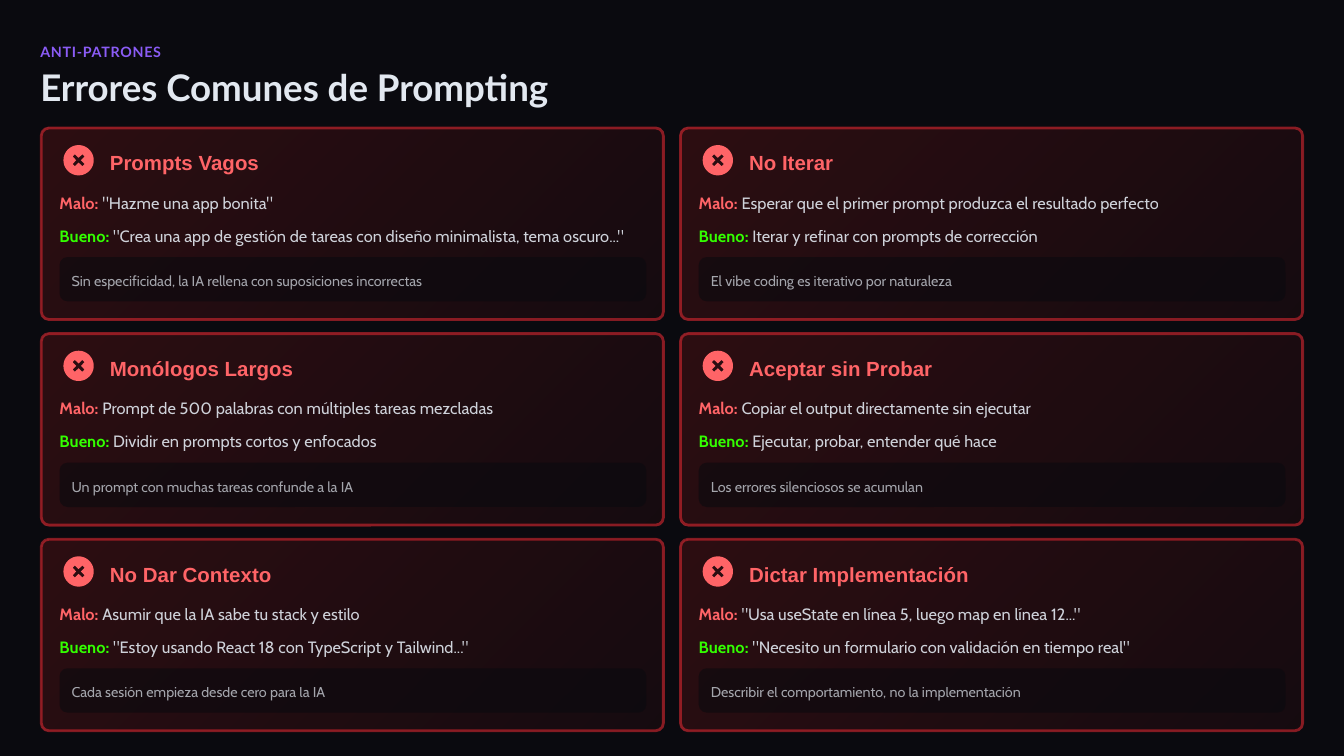
"""Builds a slide with six cards on common prompting mistakes."""
from math import cos, radians, sin

from pptx import Presentation
from pptx.dml.color import RGBColor
from pptx.enum.shapes import MSO_SHAPE
from pptx.enum.text import MSO_ANCHOR
from pptx.oxml.ns import qn
from pptx.oxml.xmlchemy import OxmlElement
from pptx.util import Inches, Pt

COLORS = {
    "background": "0A0A0F",
    "accent": "8B5CF6",
    "text": "E2E8F0",
    "card": "82181A",
    "border": "FB2C36",
    "bad": "FF6467",
    "good": "33FF00",
}
RGB = {name: RGBColor.from_string(value) for name, value in COLORS.items()}

CARDS = [
    ("Prompts Vagos", '"Hazme una app bonita"',
     '"Crea una app de gestión de tareas con diseño minimalista, tema oscuro..."',
     "Sin especificidad, la IA rellena con suposiciones incorrectas"),
    ("No Iterar", "Esperar que el primer prompt produzca el resultado perfecto",
     "Iterar y refinar con prompts de corrección",
     "El vibe coding es iterativo por naturaleza"),
    ("Monólogos Largos", "Prompt de 500 palabras con múltiples tareas mezcladas",
     "Dividir en prompts cortos y enfocados",
     "Un prompt con muchas tareas confunde a la IA"),
    ("Aceptar sin Probar", "Copiar el output directamente sin ejecutar",
     "Ejecutar, probar, entender qué hace",
     "Los errores silenciosos se acumulan"),
    ("No Dar Contexto", "Asumir que la IA sabe tu stack y estilo",
     '"Estoy usando React 18 con TypeScript y Tailwind..."',
     "Cada sesión empieza desde cero para la IA"),
    ("Dictar Implementación", '"Usa useState en línea 5, luego map en línea 12..."',
     '"Necesito un formulario con validación en tiempo real"',
     "Describir el comportamiento, no la implementación"),
]

CIRCLE = [(0.15, angle) for angle in range(0, 360, 5)]
CROSS = [(radius, turn + angle) for turn in (270, 180, 90, 0)
         for radius, angle in ((0.07, 58), (0.07, 32), (0.024, 0))]

presentation = Presentation()
presentation.slide_width = Inches(13.33)
presentation.slide_height = Inches(7.5)
slide = presentation.slides.add_slide(presentation.slide_layouts[6])
slide.background.fill.solid()
slide.background.fill.fore_color.rgb = RGB["background"]


def set_opacity(element, *percents):
    """Give each colour inside the element its opacity, in order."""
    for color, percent in zip(element.iter(qn("a:srgbClr")), percents):
        alpha = OxmlElement("a:alpha")
        alpha.set("val", str(percent * 1000))
        color.append(alpha)


def add_text(left, top, width, height, runs, font, size, spacing=1.2):
    """Add one line of text made of (text, color, bold, opacity) runs."""
    box = slide.shapes.add_textbox(Inches(left), Inches(top), Inches(width), Inches(height))
    frame = box.text_frame
    frame.word_wrap = True
    frame.vertical_anchor = MSO_ANCHOR.MIDDLE
    frame.margin_left = frame.margin_right = frame.margin_top = frame.margin_bottom = 0
    paragraph = frame.paragraphs[0]
    paragraph.line_spacing = spacing
    for text, color, bold, opacity in runs:
        run = paragraph.add_run()
        run.text = text
        run.font.name = font
        run.font.size = Pt(size)
        run.font.bold = bold
        run.font.color.rgb = RGB[color]
        if opacity < 100:
            set_opacity(run.font._element, opacity)
    return box


eyebrow = add_text(0.4, 0.4, 12.6, 0.2, [("ANTI-PATRONES", "accent", True, 100)], "Lato", 10.2)
eyebrow.text_frame.paragraphs[0].runs[0].font._element.set("spc", "50")
add_text(0.4, 0.69, 12.6, 0.4, [("Errores Comunes de Prompting", "text", True, 100)],
         "Lato", 26.2, 0.9)

for index, (title, bad, good, note) in enumerate(CARDS):
    row, column = divmod(index, 2)
    left = 0.41 + column * 6.34
    top = 1.27 + row * 2.04

    card = slide.shapes.add_shape(MSO_SHAPE.ROUNDED_RECTANGLE, Inches(left), Inches(top),
                                  Inches(6.17), Inches(1.9))
    card.adjustments[0] = 0.04
    card.shadow.inherit = False
    card.fill.gradient()
    card.fill.gradient_angle = 315
    for stop, position in zip(card.fill.gradient_stops, (0, 1)):
        stop.color.rgb = RGB["card"]
        stop.position = position
    card.line.color.rgb = RGB["border"]
    card.line.width = Pt(2)
    set_opacity(card.element.spPr, 30, 10, 50)

    outlines = [[(Inches(left + 0.37 + radius * cos(radians(angle))),
                  Inches(top + 0.32 + radius * sin(radians(angle))))
                 for radius, angle in outline] for outline in (CIRCLE, CROSS)]
    builder = slide.shapes.build_freeform(*outlines[0][0])
    builder.add_line_segments(outlines[0][1:], close=True)
    builder.move_to(*outlines[1][0])
    builder.add_line_segments(outlines[1][1:], close=True)
    icon = builder.convert_to_shape()
    icon.shadow.inherit = False
    icon.fill.solid()
    icon.fill.fore_color.rgb = RGB["bad"]
    icon.line.fill.background()

    add_text(left + 0.68, top + 0.18, 5, 0.28, [(title, "bad", True, 100)], "Arial", 14.6)
    for label, text, color, offset in (("Malo:", bad, "bad", 0.59),
                                       ("Bueno:", good, "good", 0.92)):
        add_text(left + 0.18, top + offset, 5.9, 0.24,
                 [(label, color, True, 100), (" " + text, "text", False, 90)],
                 "Cabin", 11.7, 1.3)

    panel = slide.shapes.add_shape(MSO_SHAPE.ROUNDED_RECTANGLE, Inches(left + 0.18),
                                   Inches(top + 1.28), Inches(5.82), Inches(0.44))
    panel.adjustments[0] = 0.18
    panel.shadow.inherit = False
    panel.fill.solid()
    panel.fill.fore_color.rgb = RGB["background"]
    panel.line.fill.background()
    set_opacity(panel.element.spPr, 60)
    add_text(left + 0.3, top + 1.4, 5.65, 0.2, [(note, "text", False, 70)], "Cabin", 10.2)

presentation.save("out.pptx")
